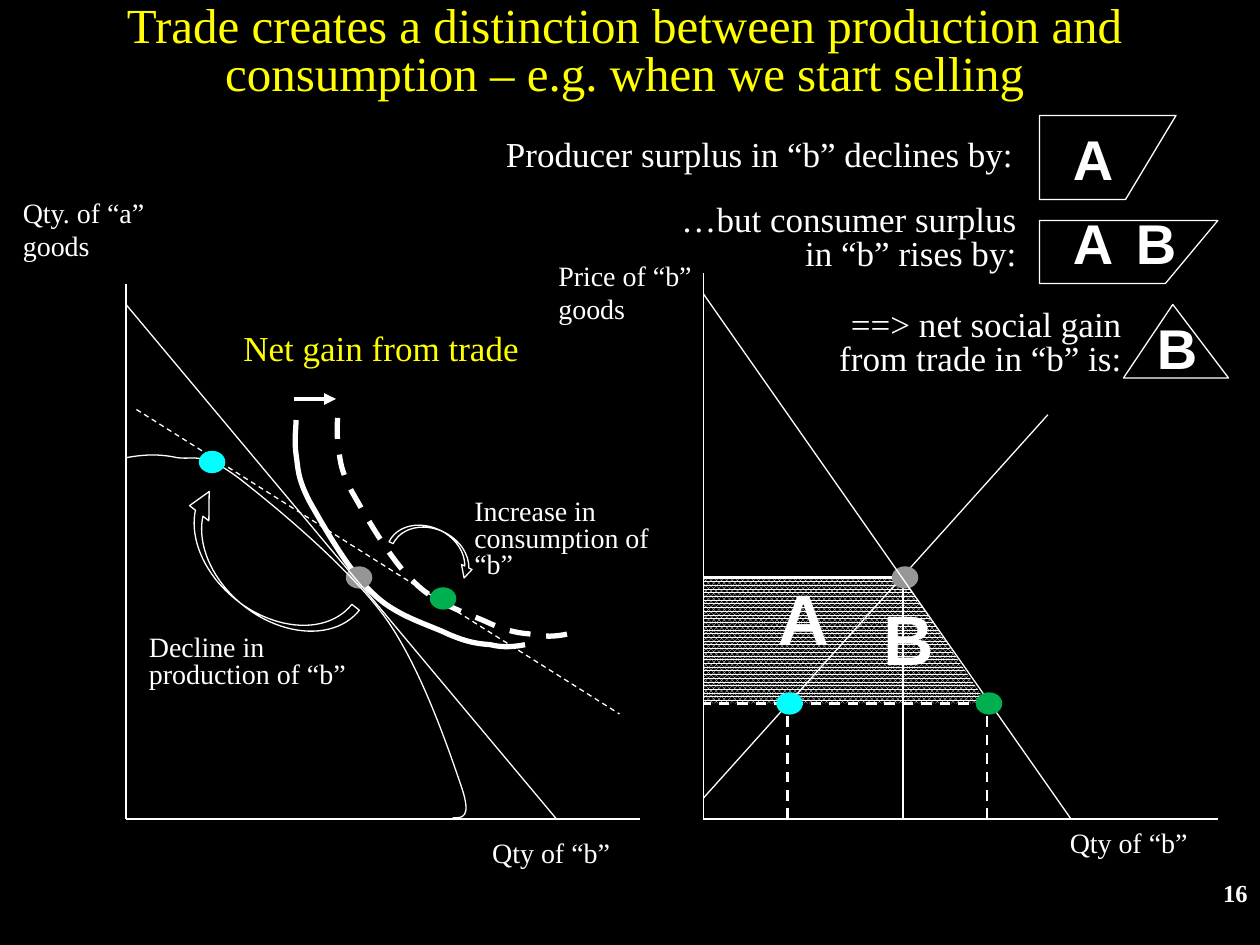
from lxml import etree
from pptx import Presentation, util as u
from pptx.dml.color import RGBColor
from pptx.enum import dml, shapes, text
from pptx.oxml.ns import qn

PX = 7620  # EMU; 120 px to the inch
WHITE, YELLOW, GRAY = "FFFFFF", "FFFF00", "969696"
GREEN, CYAN, BLACK = "00B050", "00FFFF", "000000"
SERIF, SANS = "Times New Roman", "Arial"
LEFT, MID, RIGHT = text.PP_ALIGN.LEFT, text.PP_ALIGN.CENTER, text.PP_ALIGN.RIGHT


def rgb(code):
    return RGBColor.from_string(code)


def write(frame, words, size, color=WHITE, face=SERIF, bold=False,
          align=LEFT, lead=None, wrap=True):
    frame.text = words
    frame.word_wrap = wrap
    frame.vertical_anchor = text.MSO_ANCHOR.TOP
    frame.auto_size = text.MSO_AUTO_SIZE.NONE
    para = frame.paragraphs[0]
    para.alignment, para.line_spacing = align, lead
    font = para.font
    font.size, font.name, font.bold = u.Pt(size), face, bold
    font.color.rgb = rgb(color)


def stroke(line, width=0.75, dash=False, color=WHITE):
    line.color.rgb = rgb(color)
    line.width = u.Pt(width)
    if dash:
        line.dash_style = dml.MSO_LINE.DASH


class Box:
    """Draws on a slide, measuring from its own top left corner."""

    def __init__(self, slide, left, top):
        self.shapes, self.left, self.top = slide.shapes, left, top

    def spot(self, x, y):
        return (self.left + x) * PX, (self.top + y) * PX

    def text(self, x, y, w, h, words, size, **style):
        area = self.shapes.add_textbox(*self.spot(x, y), w * PX, h * PX)
        write(area.text_frame, words, size, **style)

    def letter(self, x, y, words, size):
        self.text(x, y, 60, 70, words, size, face=SANS, bold=True, lead=0.9)

    def line(self, start, end, width=0.75, dash=False, head=False):
        link = self.shapes.add_connector(
            shapes.MSO_CONNECTOR.STRAIGHT, *self.spot(*start), *self.spot(*end))
        stroke(link.line, width, dash)
        props = link.element.spPr
        if head:
            tip = etree.SubElement(props.find(qn("a:ln")), qn("a:tailEnd"))
            tip.set("type", "triangle")
        etree.SubElement(props, qn("a:effectLst"))

    def dot(self, x, y, color):
        mark = self.shapes.add_shape(
            shapes.MSO_SHAPE.OVAL, *self.spot(x, y), 24 * PX, 20 * PX)
        mark.shadow.inherit = False
        mark.fill.solid()
        mark.fill.fore_color.rgb = rgb(color)
        stroke(mark.line, color=color)

    def arc(self, x, y, w, h, turn):
        arrow = self.shapes.add_shape(
            shapes.MSO_SHAPE.CURVED_DOWN_ARROW, *self.spot(x, y), w * PX, h * PX)
        arrow.shadow.inherit = False
        arrow.fill.background()
        stroke(arrow.line)
        arrow.rotation = turn
        for i, value in enumerate((0.14, 0.36, 0.34)):
            arrow.adjustments[i] = value

    def shape(self, points, close=True):
        start, *rest = [self.spot(*point) for point in points]
        pen = self.shapes.build_freeform(*start)
        pen.add_line_segments(rest, close=close)
        form = pen.convert_to_shape()
        form.shadow.inherit = False
        form.fill.background()
        stroke(form.line)
        return form

    def curve(self, points, width=0.75, dash=False):
        """Draw cubic curves through a start and triples of control points."""
        form = self.shape(points, close=False)
        stroke(form.line, width, dash)
        route = form.element.find(".//" + qn("a:path"))
        steps = route.findall(qn("a:lnTo"))
        for i in range(0, len(steps), 3):
            bend = etree.SubElement(route, qn("a:cubicBezTo"))
            for step in steps[i:i + 3]:
                bend.append(step[0])
                route.remove(step)


def axes(box, height):
    box.line((0, 0), (0, height))
    box.line((0, height), (490, height))


def trade(box):
    """Production frontier with the curves before and after trade."""
    taste = [(380, 344), (370, 346), (359, 347), (347, 344), (335, 343),
             (326, 342), (307, 334), (289, 325), (257, 317), (235, 295),
             (212, 274), (187, 229), (175, 208), (163, 185), (164, 176),
             (162, 163), (160, 150), (162, 136), (162, 130)]
    limit = [(0, 166), (16, 163), (31, 162), (49, 166), (67, 168), (73, 160),
             (107, 185), (139, 210), (210, 268), (246, 317), (281, 365),
             (308, 446), (319, 478), (330, 510), (320, 509), (311, 509)]
    box.curve(taste, 3)
    box.dot(210, 270, GRAY)
    axes(box, 510)
    box.curve(limit)
    box.line((0, 20), (410, 510))
    box.line((10, 120), (470, 410), dash=True)
    box.curve([(x + 40, y - 10) for x, y in taste], 3, True)
    box.dot(290, 290, GREEN)
    box.dot(70, 160, CYAN)
    box.line((160, 110), (200, 110), 2.25, head=True)
    box.arc(29, 244, 194, 65, 218.3)
    box.arc(253, 235, 85, 31, 25.8)
    box.text(-110, -90, 190, 77, "Qty. of “a” goods", 16)
    box.text(337, 520, 138, 44, "Qty of “b”", 16, wrap=False)
    box.text(100, 40, 350, 48, "Net gain from trade", 20, color=YELLOW, lead=0.9)
    box.text(10, 330, 270, 64, "Decline in\vproduction of “b”", 16, lead=0.8)
    box.text(320, 200, 230, 90, "Increase in consumption of “b”", 16, lead=0.8)


def market(box):
    """Supply and demand for good b, with the surplus areas."""
    area = box.shape([(0, 410), (270, 410), (190, 290), (0, 290)])
    area.fill.patterned()
    area.fill.pattern = dml.MSO_PATTERN.PERCENT_80
    area.fill.fore_color.rgb = rgb(WHITE)
    area.fill.back_color.rgb = rgb(BLACK)
    area.line.fill.background()
    axes(box, 520)
    box.line((190, 520), (190, 290), 1.5)
    box.line((0, 500), (328, 135))
    box.dot(180, 280, GRAY)
    box.line((0, 20), (350, 520))
    box.line((270, 410), (0, 410), 1.5, True)
    for x in (270, 80):
        box.line((x, 520), (x, 410), 1.5, True)
    box.line((180, 290), (0, 290), 1.5)
    box.text(-150, -20, 170, 77, "Price of “b” goods", 16)
    box.text(337, 520, 138, 44, "Qty of “b”", 16, wrap=False)
    box.letter(60, 290, "A", 40)
    box.letter(160, 310, "B", 40)
    box.dot(260, 400, GREEN)
    box.dot(70, 400, CYAN)


def result(box, words, place, points, letters, rise, **style):
    """One finding: its wording, then the lettered area it refers to."""
    box.shape(points)
    box.text(*place, words, 20, **style)
    for i, sign in enumerate(letters):
        box.letter(20 + 60 * i, rise, sign, 32)


def main():
    deck = Presentation()
    deck.slide_width, deck.slide_height = 1200 * PX, 900 * PX
    slide = deck.slides.add_slide(deck.slide_layouts[5])
    slide.background.fill.solid()
    slide.background.fill.fore_color.rgb = rgb(BLACK)
    title = slide.shapes.title
    title.left, title.top, title.width, title.height = 0, 0, 1190 * PX, 102 * PX
    write(title.text_frame, "Trade creates a distinction between production and "
          "consumption – e.g. when we start selling", 28, YELLOW,
          align=MID, lead=0.8)
    market(Box(slide, 670, 260))
    trade(Box(slide, 120, 270))
    result(Box(slide, 990, 110), "Producer surplus in “b” declines by:",
           (-520, 10, 520, 53), [(0, 80), (82, 80), (130, 0), (0, 0)], "A", 10)
    result(Box(slide, 990, 210), "…but consumer surplus in “b” rises by:",
           (-360, -20, 350, 77), [(0, 0), (170, 0), (120, 60), (0, 60)],
           "AB", -10, align=RIGHT, lead=0.8)
    result(Box(slide, 1070, 290), "==> net social gain from trade in “b” is:",
           (-330, 0, 340, 77), [(0, 70), (100, 70), (47, 0)],
           "B", 10, align=RIGHT, lead=0.8)
    Box(slide, 1050, 830).text(0, 0, 150, 40, "16", 14, bold=True, align=RIGHT)
    deck.save("out.pptx")


if __name__ == "__main__":
    main()
